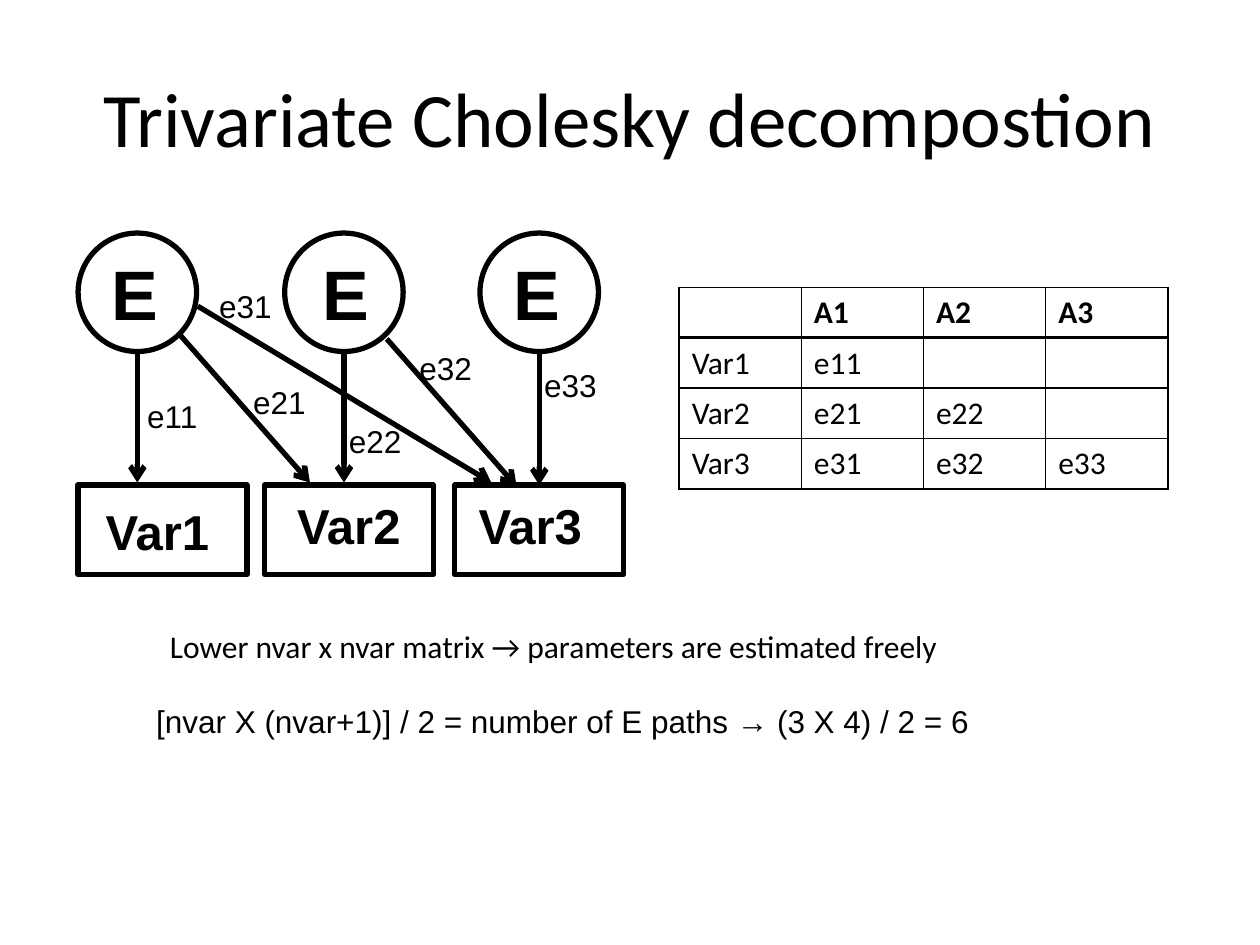
from dataclasses import dataclass

from lxml import etree
from pptx import Presentation
from pptx.dml.color import RGBColor
from pptx.enum.shapes import MSO_CONNECTOR, MSO_SHAPE
from pptx.enum.text import MSO_ANCHOR, MSO_AUTO_SIZE, PP_ALIGN
from pptx.oxml.ns import qn
from pptx.util import Inches, Pt

STRAIGHT = MSO_CONNECTOR.STRAIGHT
OVAL, RECTANGLE = MSO_SHAPE.OVAL, MSO_SHAPE.RECTANGLE
MIDDLE, CENTER = MSO_ANCHOR.MIDDLE, PP_ALIGN.CENTER
FIT_TEXT, FIXED = MSO_AUTO_SIZE.SHAPE_TO_FIT_TEXT, MSO_AUTO_SIZE.NONE
TOP_SIDE = 0


@dataclass(frozen=True)
class Theme:
    ink: str = "000000"
    title_font: str = "Calibri"
    diagram_font: str = "Arial"
    title: int = 44
    factor: int = 40
    variable: int = 28
    body: int = 18
    stroke: int = 3
    grid_line: int = 1
    header_line: int = 2


THEME = Theme()
INK = RGBColor.from_string(THEME.ink)

TITLE = "Trivariate Cholesky decompostion"
MATRIX_NOTE = "Lower nvar x nvar matrix → parameters are estimated freely"
COUNT_NOTE = "[nvar X (nvar+1)] / 2 = number of E paths → (3 X 4) / 2 = 6"

# Diagram rows, in inches
CIRCLE, CIRCLE_TOP = 0.94, 1.85
BOX_WIDTH, BOX_HEIGHT, BOX_TOP = 1.34, 0.71, 3.85
ARROW_TIP = 3.83

# circle left, letter left
FACTORS = [(0.62, 0.79), (2.26, 2.46), (3.81, 3.98)]
# name, box left, name left, name top
VARIABLES = [("Var1", 0.62, 0.74, 3.93), ("Var2", 2.1, 2.26, 3.88), ("Var3", 3.61, 3.7, 3.88)]
# name, start, end, label corner
PATHS = [
    ("e11", (1.09, 2.8), (1.09, ARROW_TIP), (1.07, 3.1)),
    ("e21", (1.43, 2.66), (2.46, ARROW_TIP), (1.91, 2.99)),
    ("e31", (1.57, 2.43), (3.9, ARROW_TIP), (1.64, 2.23)),
    ("e22", (2.73, 2.8), (2.73, ARROW_TIP), (2.67, 3.3)),
    ("e32", (3.07, 2.69), (4.1, 3.86), (3.23, 2.72)),
    ("e33", (4.28, 2.8), (4.28, ARROW_TIP), (4.22, 2.86)),
]
JOINED_PATH = "e33"  # ends at the middle of the last box's top side

MATRIX = [
    ["", "A1", "A2", "A3"],
    ["Var1", "e11", "", ""],
    ["Var2", "e21", "e22", ""],
    ["Var3", "e31", "e32", "e33"],
]
MATRIX_LEFT, MATRIX_TOP, COLUMN, ROW = 5.39, 2.28, 0.97, 0.4


def inches(*lengths):
    return [Inches(length) for length in lengths]


def add_span(para, text, size, font, bold=False):
    span = para.add_run()
    span.text = text
    span.font.size = Pt(size)
    span.font.name = font
    span.font.bold = bold
    span.font.color.rgb = INK


def add_text(page, text, area, size, font=THEME.diagram_font, bold=False, wrap=False):
    box = page.shapes.add_textbox(*inches(*area))
    frame = box.text_frame
    frame.word_wrap = wrap
    frame.auto_size = FIT_TEXT
    add_span(frame.paragraphs[0], text, size, font, bold)
    return frame


def add_outline(page, kind, *area):
    shape = page.shapes.add_shape(kind, *inches(*area))
    shape.shadow.inherit = False
    shape.fill.background()
    shape.line.color.rgb = INK
    shape.line.width = Pt(THEME.stroke)
    return shape


def add_arrow(page, start, end, target=None):
    arrow = page.shapes.add_connector(STRAIGHT, *inches(*start, *end))
    if target is not None:
        arrow.end_connect(target, TOP_SIDE)
    arrow.line.color.rgb = INK
    arrow.line.width = Pt(THEME.stroke)
    etree.SubElement(arrow.line._get_or_add_ln(), qn("a:tailEnd"), type="arrow")
    etree.SubElement(arrow._element.spPr, qn("a:effectLst"))


def set_borders(cell, widths):
    """Draw cell borders; widths maps a:lnL, a:lnR, a:lnT and a:lnB to points."""
    properties = cell._tc.get_or_add_tcPr()
    for index, (side, width) in enumerate(widths.items()):
        line = etree.Element(qn(side), w=str(Pt(width)))
        fill = etree.SubElement(line, qn("a:solidFill"))
        etree.SubElement(fill, qn("a:srgbClr"), val=THEME.ink)
        properties.insert(index, line)


def add_diagram(page):
    for circle_left, letter_left in FACTORS:
        add_outline(page, OVAL, circle_left, CIRCLE_TOP, CIRCLE, CIRCLE)
        add_text(page, "E", (letter_left, 1.94, 0.58, 0.77), THEME.factor, bold=True)
    for name, box_left, left, top in VARIABLES:
        last_box = add_outline(page, RECTANGLE, box_left, BOX_TOP, BOX_WIDTH, BOX_HEIGHT)
        add_text(page, name, (left, top, 1.03, 0.57), THEME.variable, bold=True)
    for name, start, end, corner in PATHS:
        add_arrow(page, start, end, last_box if name == JOINED_PATH else None)
        add_text(page, name, (*corner, 0.62, 0.4), THEME.body)


def add_matrix(page):
    rows, columns = len(MATRIX), len(MATRIX[0])
    area = inches(MATRIX_LEFT, MATRIX_TOP, COLUMN * columns, ROW * rows)
    table = page.shapes.add_table(rows, columns, *area).table
    table.horz_banding = False
    for r, values in enumerate(MATRIX):
        for c, value in enumerate(values):
            cell = table.cell(r, c)
            cell.fill.background()
            widths = dict.fromkeys(("a:lnL", "a:lnR", "a:lnT", "a:lnB"), THEME.grid_line)
            if r == 0:
                widths["a:lnB"] = THEME.header_line
            elif r == 1:
                widths["a:lnT"] = THEME.header_line
            set_borders(cell, widths)
            if value:
                para = cell.text_frame.paragraphs[0]
                add_span(para, value, THEME.body, THEME.title_font, bold=r == 0)


def main():
    deck = Presentation()
    deck.slide_width, deck.slide_height = inches(10, 7.5)
    page = deck.slides.add_slide(deck.slide_layouts[6])

    heading = add_text(page, TITLE, (0.5, 0.3, 9, 1.25), THEME.title, THEME.title_font, wrap=True)
    heading.auto_size = FIXED
    heading.vertical_anchor = MIDDLE
    heading.paragraphs[0].alignment = CENTER

    add_diagram(page)
    add_matrix(page)
    add_text(page, MATRIX_NOTE, (1.25, 4.93, 7.09, 0.4), THEME.body, THEME.title_font, wrap=True)
    add_text(page, COUNT_NOTE, (1.14, 5.52, 6.68, 0.4), THEME.body)
    deck.save("out.pptx")


if __name__ == "__main__":
    main()
